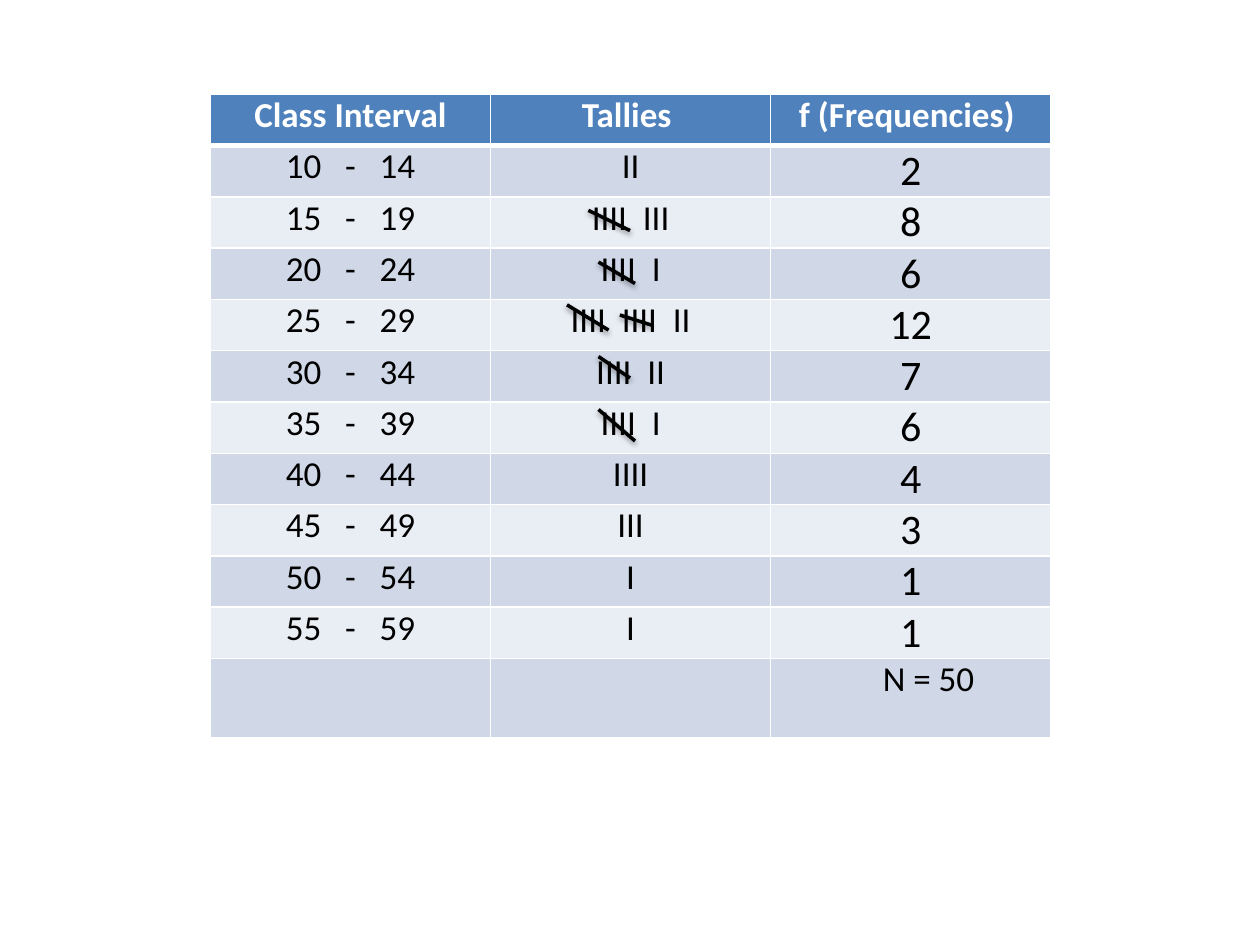
from typing import NamedTuple

from lxml.etree import SubElement as Sub
from pptx import Presentation
from pptx.dml.color import RGBColor
from pptx.enum.shapes import MSO_CONNECTOR as Conn
from pptx.enum.text import PP_ALIGN as Align
from pptx.oxml.ns import qn
from pptx.util import Inches, Pt

WHITE = RGBColor(0xFF, 0xFF, 0xFF)
BLACK = RGBColor(0, 0, 0)
BLUE = RGBColor(0x4F, 0x81, 0xBD)
DARK = RGBColor(0xD0, 0xD8, 0xE8)
LIGHT = RGBColor(0xE9, 0xED, 0xF4)
FONT = "Calibri"
SPACE = 4.52  # width in points of one space at 20 pt


class Row(NamedTuple):
    low: int
    tally: str
    freq: int


class Stroke(NamedTuple):
    x1: float
    y1: float
    x2: float
    y2: float


HEADS = ["Class Interval", "Tallies ", "f (Frequencies) "]
TALLIES = [
    ("II", 2), ("IIII III", 8), ("IIII I", 6), ("IIII IIII II", 12),
    ("IIII II", 7), ("IIII I", 6), ("IIII", 4), ("III", 3), ("I", 1), ("I", 1),
]
ROWS = [Row(10 + 5 * i, tally, freq) for i, (tally, freq) in enumerate(TALLIES)]
STROKES = [
    Stroke(4.67, 1.67, 5, 1.83),
    Stroke(4.5, 2.42, 4.83, 2.62),
    Stroke(4.75, 2.08, 5.04, 2.25),
    Stroke(4.92, 2.5, 5.17, 2.58),
    Stroke(4.75, 2.83, 5, 3),
    Stroke(4.75, 3.25, 5.04, 3.5),
]


def write(cell, text: str, *, size=20, color=BLACK, bold=False,
          align=Align.CENTER, gap=0, indent=0.0) -> None:
    """Put text in a cell; each space is widened by gap spaces."""
    para = cell.text_frame.paragraphs[0]
    para.alignment = align
    if indent:
        props = para._p.get_or_add_pPr()
        props.set("marL", str(Inches(indent)))
        props.set("indent", "0")
    parts = text.replace(" ", "| |").split("|") if gap else [text]
    for part in parts:
        run = para.add_run()
        run.text = part
        font = run.font
        font.name, font.size, font.bold = FONT, Pt(size), bold
        font.color.rgb = color
        if gap and part == " ":
            run._r.get_or_add_rPr().set("spc", str(round(gap * SPACE * 100)))


def dress(cell, fill: RGBColor, top=1, base=1) -> None:
    """Set the margins, white borders and fill of a cell."""
    cell.margin_left = cell.margin_right = Inches(0.07)
    cell.margin_top = cell.margin_bottom = 0
    props = cell._tc.get_or_add_tcPr()
    for side, width in (("L", 1), ("R", 1), ("T", top), ("B", base)):
        line = Sub(props, qn(f"a:ln{side}"), w=str(Pt(width)))
        paint = Sub(line, qn("a:solidFill"))
        Sub(paint, qn("a:srgbClr"), val=str(WHITE))
    cell.fill.solid()
    cell.fill.fore_color.rgb = fill


def strike(slide, mark: Stroke) -> None:
    """Draw the shaded stroke across a group of tallies."""
    line = slide.shapes.add_connector(Conn.STRAIGHT, *map(Inches, mark))
    line.line.color.rgb = BLACK
    line.line.width = Pt(2)
    fx = Sub(line._element.spPr, qn("a:effectLst"))
    shade = Sub(fx, qn("a:outerShdw"), blurRad=str(Pt(3.1)),
                dist=str(Pt(1.6)), dir="5400000", rotWithShape="0")
    tint = Sub(shade, qn("a:srgbClr"), val=str(BLACK))
    Sub(tint, qn("a:alpha"), val="38000")


def grid(slide) -> None:
    """Build the frequency table."""
    count = len(ROWS) + 2
    table = slide.shapes.add_table(
        count, len(HEADS), Inches(1.67), Inches(0.75),
        Inches(6.67), Inches(5.09)).table
    for row in table.rows:
        row.height = Inches(4.46 / (count - 1))
    table.rows[count - 1].height = Inches(0.63)

    # Fills and borders
    for r in range(count):
        fill = BLUE if r == 0 else DARK if r % 2 else LIGHT
        for c in range(len(HEADS)):
            dress(table.cell(r, c), fill, top=3 if r == 1 else 1,
                  base=3 if r == 0 else 1)

    # Header, classes and total
    for c, head in enumerate(HEADS):
        write(table.cell(0, c), head, color=WHITE, bold=True)
    for r, row in enumerate(ROWS, 1):
        write(table.cell(r, 0), f"{row.low} - {row.low + 4}", gap=2)
        write(table.cell(r, 1), row.tally, gap=1)
        write(table.cell(r, 2), str(row.freq), size=24)
    write(table.cell(count - 1, 2), "N = 50", align=Align.LEFT, indent=0.82)


def main() -> None:
    deck = Presentation()
    deck.slide_width, deck.slide_height = Inches(10), Inches(7.5)
    slide = deck.slides.add_slide(deck.slide_layouts[6])
    grid(slide)
    for mark in STROKES:
        strike(slide, mark)
    deck.save("out.pptx")


if __name__ == "__main__":
    main()
